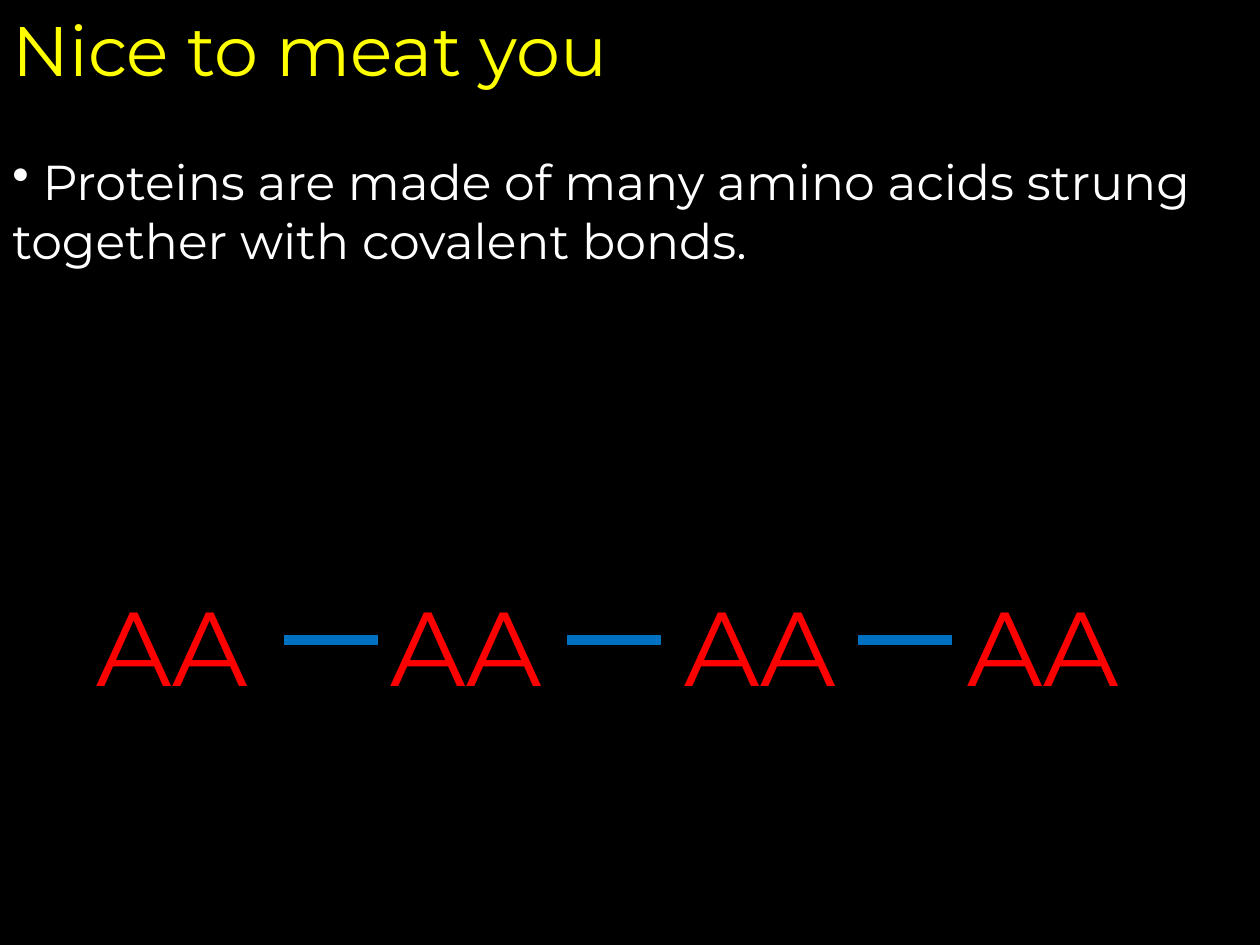
from dataclasses import dataclass

from lxml import etree
from pptx import Presentation
from pptx.dml.color import RGBColor
from pptx.enum.shapes import MSO_CONNECTOR
from pptx.enum.text import MSO_ANCHOR, MSO_AUTO_SIZE, PP_ALIGN
from pptx.oxml.ns import qn
from pptx.util import Emu, Pt

STRAIGHT = MSO_CONNECTOR.STRAIGHT
TOP = MSO_ANCHOR.TOP
LEFT = PP_ALIGN.LEFT
FIT_SHAPE = MSO_AUTO_SIZE.SHAPE_TO_FIT_TEXT

PX_PER_INCH = 126
SLIDE_W, SLIDE_H = 1260, 945
TITLE_ONLY = 5

ACID_LEFTS = (84, 378, 672, 955)
ACID_TOP, ACID_W, ACID_H = 575, 220, 140
BOND_LEFTS = (284, 567, 858)
BOND_Y, BOND_LENGTH = 640, 94


@dataclass(frozen=True)
class Theme:
    font: str = "Montserrat"
    background: RGBColor = RGBColor(0, 0, 0)
    title: RGBColor = RGBColor(0xFF, 0xFF, 0)
    body: RGBColor = RGBColor(0xFF, 0xFF, 0xFF)
    acid: RGBColor = RGBColor(0xFF, 0, 0)
    bond: RGBColor = RGBColor(0, 0x70, 0xC0)
    title_size: int = 40
    body_size: int = 28
    acid_size: int = 60
    bond_width: int = 6


THEME = Theme()


def px(length):
    return Emu(round(length * 914400 / PX_PER_INCH))


def write_text(shape, text, size, color):
    """Fill a text shape with one left-aligned paragraph and return it."""
    frame = shape.text_frame
    frame.word_wrap = True
    frame.auto_size = FIT_SHAPE
    frame.vertical_anchor = TOP
    paragraph = frame.paragraphs[0]
    paragraph.text = text
    paragraph.alignment = LEFT
    paragraph.font.name = THEME.font
    paragraph.font.size = Pt(size)
    paragraph.font.color.rgb = color
    return paragraph


def set_title(slide, text):
    title = slide.shapes.title
    title.left, title.top = px(0), px(0)
    title.width, title.height = px(SLIDE_W), px(97)
    write_text(title, text, THEME.title_size, THEME.title)


def add_text(slide, text, left, top, width, height, size, color):
    box = slide.shapes.add_textbox(px(left), px(top), px(width), px(height))
    return write_text(box, text, size, color)


def add_bullet(paragraph):
    properties = paragraph._p.get_or_add_pPr()
    bullet = etree.Element(qn("a:buChar"), char="•")
    properties.insert_element_before(
        bullet, "a:tabLst", "a:defRPr", "a:extLst")


def add_bond(slide, left):
    bond = slide.shapes.add_connector(
        STRAIGHT, px(left), px(BOND_Y), px(left + BOND_LENGTH), px(BOND_Y))
    bond.line.color.rgb = THEME.bond
    bond.line.width = Pt(THEME.bond_width)
    etree.SubElement(bond._element.spPr, qn("a:effectLst"))


def main():
    presentation = Presentation()
    presentation.slide_width = px(SLIDE_W)
    presentation.slide_height = px(SLIDE_H)
    slide = presentation.slides.add_slide(
        presentation.slide_layouts[TITLE_ONLY])
    slide.background.fill.solid()
    slide.background.fill.fore_color.rgb = THEME.background

    set_title(slide, "Nice to meat you")
    statement = add_text(
        slide,
        " Proteins are made of many amino acids strung together "
        "with covalent bonds.",
        0, 145, SLIDE_W, 131, THEME.body_size, THEME.body)
    add_bullet(statement)

    for left in ACID_LEFTS:
        add_text(slide, "AA", left, ACID_TOP, ACID_W, ACID_H,
                 THEME.acid_size, THEME.acid)
    for left in BOND_LEFTS:
        add_bond(slide, left)

    presentation.save("out.pptx")


if __name__ == "__main__":
    main()
